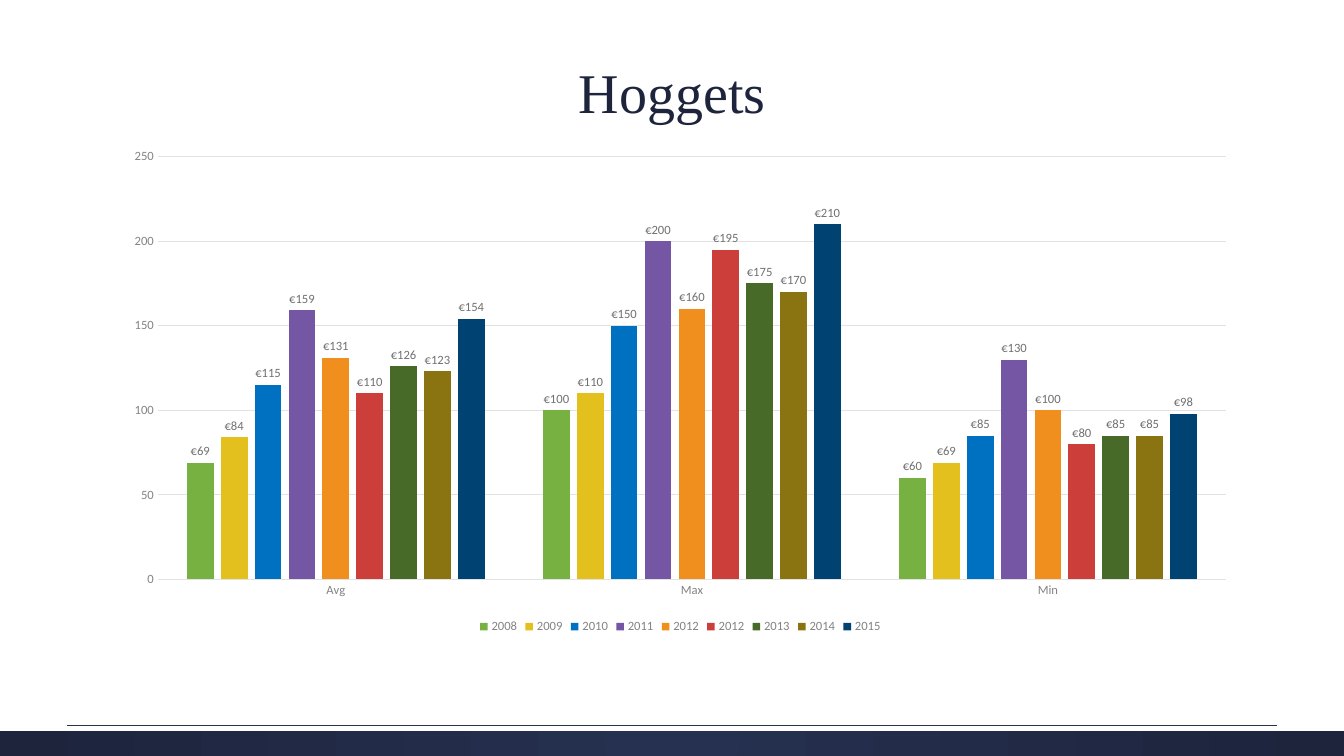
import pptx
import pptx.chart.data
import pptx.dml.color
import pptx.enum.chart
import pptx.enum.shapes
import pptx.enum.text
import pptx.oxml
import pptx.oxml.ns
import pptx.util
from pptx.util import Cm, Pt

COLORS = {
    "navy": "1D243C", "band": "263050", "white": "FFFFFF", "grid": "E2E2E2",
    "axis": "838383", "label": "707070", "text": "404040",
}
WIDTH, HEIGHT = 33.87, 19.05
PRICES = [
    ("2008", "77B142", (69, 100, 60)),
    ("2009", "E3C01E", (84, 110, 69)),
    ("2010", "0070C0", (115, 150, 85)),
    ("2011", "7556A4", (159, 200, 130)),
    ("2012", "F08F1E", (131, 160, 100)),
    ("2012", "CB3E3A", (110, 195, 80)),
    ("2013", "476A28", (126, 175, 85)),
    ("2014", "897411", (123, 170, 85)),
    ("2015", "004373", (154, 210, 98)),
]


def rgb(value):
    return pptx.dml.color.RGBColor.from_string(value)


def style_font(font, size, color, name="Calibri"):
    font.size = Pt(size)
    font.name = name
    font.color.rgb = rgb(color)


def add_bar(slide, x, y, w, h):
    sp = slide.shapes.add_shape(
        pptx.enum.shapes.MSO_SHAPE.RECTANGLE, Cm(x), Cm(y), Cm(w), Cm(h))
    sp.shadow.inherit = False
    sp.line.fill.background()
    return sp


def add_footer(slide, x, y, w, h):
    """Dark band with a radial gradient, a white strip on top and a thin rule."""
    fill = add_bar(slide, x, y, w, h).fill
    fill.gradient()
    for stop, name in zip(fill.gradient_stops, ("band", "navy")):
        stop.color.rgb = rgb(COLORS[name])
    stops = fill.gradient_stops[0]._gs.getparent()
    lin = stops.getnext()
    lin.getparent().replace(lin, pptx.oxml.parse_xml(
        f'<a:path {pptx.oxml.ns.nsdecls("a")} path="circle">'
        '<a:fillToRect l="50000" t="50000" r="50000" b="50000"/></a:path>'))

    strip = add_bar(slide, x, y, w, h / 6)
    strip.fill.solid()
    strip.fill.fore_color.rgb = rgb(COLORS["white"])

    margin, rule_y = w * 0.05, y - 0.02
    rule = slide.shapes.add_connector(
        pptx.enum.shapes.MSO_CONNECTOR.STRAIGHT,
        Cm(x + margin), Cm(rule_y), Cm(x + w - margin), Cm(rule_y))
    rule.line.color.rgb = rgb(COLORS["band"])
    rule.line.width = Pt(0.75)
    rule._element.spPr.append(
        pptx.oxml.parse_xml(f'<a:effectLst {pptx.oxml.ns.nsdecls("a")}/>'))


def add_title(slide, x, y, w, h):
    title = slide.shapes.title
    title.left, title.top, title.width, title.height = Cm(x), Cm(y), Cm(w), Cm(h)
    tf = title.text_frame
    tf.vertical_anchor = pptx.enum.text.MSO_ANCHOR.MIDDLE
    p = tf.paragraphs[0]
    p.alignment = pptx.enum.text.PP_ALIGN.CENTER
    p.line_spacing = 0.9
    r = p.add_run()
    r.text = "Hoggets"
    style_font(r.font, 40, COLORS["navy"], "Times New Roman")


def style_axis(axis):
    axis.major_tick_mark = pptx.enum.chart.XL_TICK_MARK.NONE
    axis.minor_tick_mark = pptx.enum.chart.XL_TICK_MARK.NONE
    style_font(axis.tick_labels.font, 9, COLORS["axis"])


def style_line(line):
    line.color.rgb = rgb(COLORS["grid"])
    line.width = Pt(0.75)


def add_price_chart(slide, x, y, w, h):
    data = pptx.chart.data.CategoryChartData()
    data.categories = ["Avg", "Max", "Min"]
    for year, _, values in PRICES:
        data.add_series(year, values)
    chart = slide.shapes.add_chart(
        pptx.enum.chart.XL_CHART_TYPE.COLUMN_CLUSTERED,
        Cm(x), Cm(y), Cm(w), Cm(h), data).chart
    chart.has_title = False
    style_font(chart.font, 10, COLORS["text"])

    style_axis(chart.category_axis)
    style_line(chart.category_axis.format.line)
    prices = chart.value_axis
    style_axis(prices)
    prices.minimum_scale, prices.maximum_scale, prices.major_unit = 0, 250, 50
    prices.tick_labels.number_format = "General"
    prices.tick_labels.number_format_is_linked = False
    prices.format.line.fill.background()
    style_line(prices.major_gridlines.format.line)

    chart.has_legend = True
    chart.legend.position = pptx.enum.chart.XL_LEGEND_POSITION.BOTTOM
    chart.legend.include_in_layout = False
    style_font(chart.legend.font, 9, COLORS["axis"])

    plot = chart.plots[0]
    plot.vary_by_categories = False
    plot.gap_width, plot.overlap = 219, -27
    for series, (_, color, _) in zip(plot.series, PRICES):
        series.format.fill.solid()
        series.format.fill.fore_color.rgb = rgb(color)
        labels = series.data_labels
        labels.show_value = True
        labels.number_format = '"€"#,##0'
        labels.number_format_is_linked = False
        labels.position = pptx.enum.chart.XL_LABEL_POSITION.OUTSIDE_END
        style_font(labels.font, 9, COLORS["label"])


def main():
    prs = pptx.Presentation()
    prs.slide_width, prs.slide_height = Cm(WIDTH), Cm(HEIGHT)
    slide = prs.slides.add_slide(prs.slide_layouts[5])
    footer_h = 0.76
    add_footer(slide, 0, HEIGHT - footer_h, WIDTH, footer_h)
    add_title(slide, 3.73, 1.3, 26.42, 2.21)
    add_price_chart(slide, 2.82, 3.51, 28.65, 12.57)
    prs.save("out.pptx")


if __name__ == "__main__":
    main()
